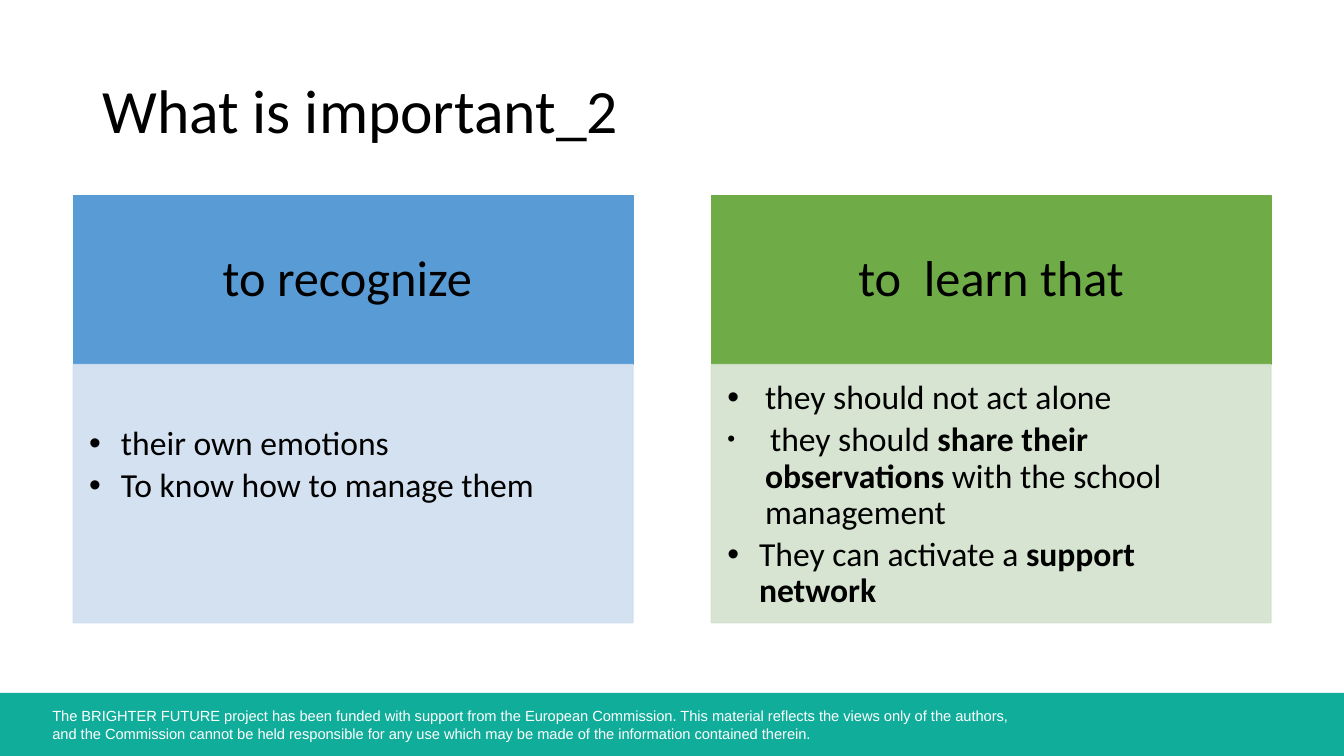
from dataclasses import dataclass

from lxml import etree
from pptx import Presentation
from pptx import util as u
from pptx.dml.color import RGBColor
from pptx.enum import shapes, text
from pptx.oxml.ns import qn

HUES = {
    "black": "000000",
    "white": "FFFFFF",
    "teal": "10AD9A",
    "blue": "599BD5",
    "pale blue": "CFDEEF",
    "green": "6FAB46",
    "pale green": "D3E1CC",
}
TOP, MID = 4.93, 9.19
WIDE, HEAD, BODY = 14.1, 4.26, 6.5
LEFT, STEP = 1.85, 16.08


@dataclass
class Run:
    words: str
    size: float = 24
    bold: bool = False


@dataclass
class Point:
    runs: list[Run]
    dent: float = 0.8


@dataclass
class Card:
    title: str
    hue: str
    inset: float
    points: list[Point]


CARDS = [
    Card("to recognize ", "blue", 1.56, [
        Point([Run("their own emotions")]),
        Point([Run("To know how to manage them")]),
    ]),
    Card("to  learn that", "green", 0.4, [
        Point([Run("they should not act alone")], 0.95),
        Point([Run(" ", 16), Run("they should "),
               Run("share their observations", bold=True),
               Run(" with the school management")], 0.95),
        Point([Run("They can activate a "), Run("support network", bold=True)]),
    ]),
]
NOTE = [
    "The BRIGHTER FUTURE project has been funded with support from the European "
    "Commission. This material reflects the views only of the authors, ",
    "and the Commission cannot be held responsible for any use which may be made "
    "of the information contained therein.",
]


def tint(hue: str) -> RGBColor:
    return RGBColor.from_string(HUES[hue])


def write(para, run: Run, hue: str = "black", face: str = "Calibri") -> None:
    part = para.add_run()
    part.text = run.words
    font = part.font
    font.size, font.bold, font.name = u.Pt(run.size), run.bold, face
    font.color.rgb = tint(hue)


def frame(shape, anchor, left: float, top: float, right: float, base: float):
    """Set wrap, anchor and insets, and return the text frame."""
    box = shape.text_frame
    box.word_wrap = True
    box.vertical_anchor = anchor
    box.margin_left, box.margin_top = u.Cm(left), u.Cm(top)
    box.margin_right, box.margin_bottom = u.Cm(right), u.Cm(base)
    return box


def block(slide, x: float, y: float, w: float, h: float, hue: str,
          alpha: int = 100, edge: bool = True):
    """Draw a filled rectangle with an optional edge of the same colour."""
    shape = slide.shapes.add_shape(
        shapes.MSO_SHAPE.RECTANGLE, u.Cm(x), u.Cm(y), u.Cm(w), u.Cm(h))
    shape.shadow.inherit = False
    shape.fill.solid()
    shape.fill.fore_color.rgb = tint(hue)
    if edge:
        shape.line.color.rgb = tint(hue)
        shape.line.width = u.Pt(1)
    else:
        shape.line.fill.background()
    if alpha < 100:
        for tone in shape.element.spPr.iter(qn("a:srgbClr")):
            etree.SubElement(tone, qn("a:alpha"), val=str(alpha * 1000))
    return shape


def dot(para, dent: float) -> None:
    """Give the paragraph a black bullet with a hanging indent."""
    props = para._p.get_or_add_pPr()
    props.set("marL", str(u.Cm(dent)))
    props.set("indent", str(-u.Cm(dent)))
    tone = etree.SubElement(props, qn("a:buClr"))
    etree.SubElement(tone, qn("a:srgbClr"), val=HUES["black"])
    etree.SubElement(props, qn("a:buFont"), typeface="Arial")
    etree.SubElement(props, qn("a:buChar"), char="•")


def draw(slide, card: Card, x: float) -> None:
    head = block(slide, x, TOP, WIDE, HEAD, card.hue)
    para = frame(head, text.MSO_ANCHOR.MIDDLE, 0.9, 0.5, 0.9, 0.5).paragraphs[0]
    para.alignment = text.PP_ALIGN.CENTER
    para.line_spacing = 0.9
    write(para, Run(card.title, 36))

    body = block(slide, x, MID, WIDE, BODY, f"pale {card.hue}", alpha=89)
    box = frame(body, text.MSO_ANCHOR.TOP, 0.4, card.inset, 0.56, 0.6)
    for rank, point in enumerate(card.points):
        para = box.add_paragraph() if rank else box.paragraphs[0]
        dot(para, point.dent)
        para.alignment = text.PP_ALIGN.LEFT
        para.line_spacing = 0.9
        if rank:
            para.space_before = u.Pt(4.2)
        for run in point.runs:
            write(para, run)


def label(slide, x: float, y: float, w: float, h: float, anchor):
    """Add a text box and return its first paragraph."""
    shape = slide.shapes.add_textbox(u.Cm(x), u.Cm(y), u.Cm(w), u.Cm(h))
    return frame(shape, anchor, 0.25, 0.13, 0.25, 0.13).paragraphs[0]


def main() -> None:
    deck = Presentation()
    deck.slide_width, deck.slide_height = u.Cm(33.87), u.Cm(19.05)
    slide = deck.slides.add_slide(deck.slide_layouts[6])

    block(slide, 0, 17.46, 33.87, 1.59, "teal", edge=False)
    foot = label(slide, 1.07, 17.68, 25.4, 1.14, text.MSO_ANCHOR.TOP)
    for rank, line in enumerate(NOTE):
        if rank:
            foot.add_line_break()
        write(foot, Run(line, 10.5), "white", "Arial")

    title = label(slide, 2.33, 1.01, 29.21, 3.68, text.MSO_ANCHOR.MIDDLE)
    title.line_spacing = 0.9
    write(title, Run("What is important_2", 44))

    for rank, card in enumerate(CARDS):
        draw(slide, card, LEFT + rank * STEP)
    deck.save("out.pptx")


if __name__ == "__main__":
    main()
